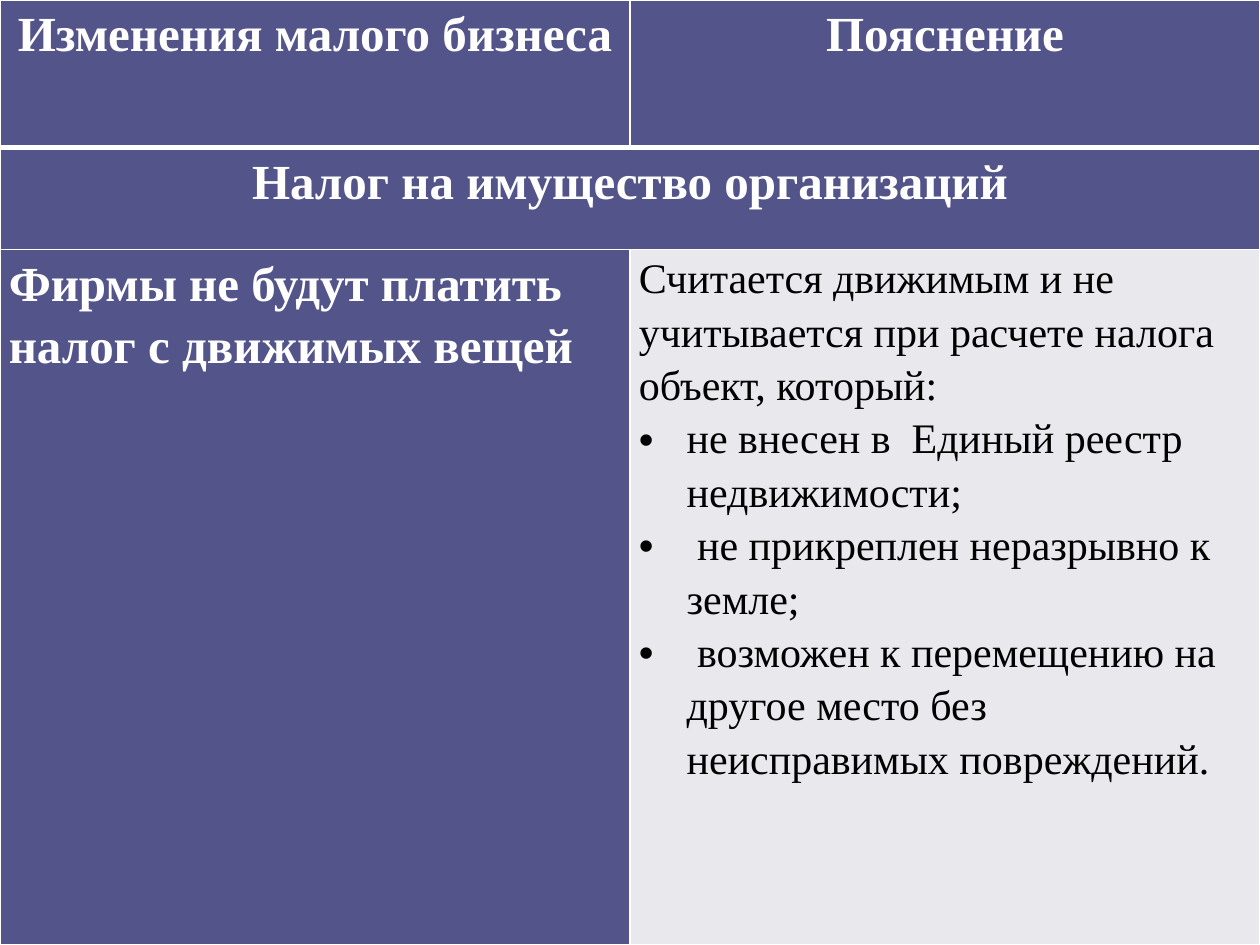
from lxml import etree
from pptx import Presentation
from pptx.dml.color import RGBColor
from pptx.enum import text
from pptx.oxml.ns import qn
from pptx.util import Inches, Pt

INDIGO = RGBColor(0x53, 0x54, 0x8A)
PALE = RGBColor(0xE9, 0xE9, 0xED)
WHITE = RGBColor(0xFF, 0xFF, 0xFF)
BLACK = RGBColor(0, 0, 0)

CENTER = text.PP_ALIGN.CENTER
LEFT = text.PP_ALIGN.LEFT


class TaxSlide:
    font = "Times New Roman"
    line_spacing = 1.15
    side_margin = Inches(0.07)
    bullet_indent = Inches(0.38)

    def __init__(self, deck):
        self.slide = deck.slides.add_slide(deck.slide_layouts[6])

    def table(self, widths, heights):
        frame = self.slide.shapes.add_table(
            len(heights), len(widths), 0, 0,
            Inches(sum(widths)), Inches(sum(heights)))
        grid = frame.table
        for column, width in zip(grid.columns, widths):
            column.width = Inches(width)
        for row, height in zip(grid.rows, heights):
            row.height = Inches(height)
        return grid

    def borders(self, cell, top=1, bottom=1):
        properties = cell._tc.get_or_add_tcPr()
        for side, width in (("L", 1), ("R", 1), ("T", top), ("B", bottom)):
            line = etree.SubElement(properties, qn(f"a:ln{side}"), w=str(Pt(width)))
            fill = etree.SubElement(line, qn("a:solidFill"))
            etree.SubElement(fill, qn("a:srgbClr"), val=str(WHITE))

    def fill(self, cell, color):
        cell.fill.solid()
        cell.fill.fore_color.rgb = color
        cell.margin_left = cell.margin_right = self.side_margin
        cell.margin_top = cell.margin_bottom = 0

    def bullet(self, paragraph):
        properties = paragraph._p.get_or_add_pPr()
        properties.set("marL", str(self.bullet_indent))
        properties.set("indent", str(-self.bullet_indent))
        etree.SubElement(properties, qn("a:buFont"), typeface="Arial")
        etree.SubElement(properties, qn("a:buChar"), char="•")

    def cell_text(self, cell, lead, bullets=(), size=28, color=WHITE, bold=True, align=LEFT):
        body = cell.text_frame
        for index, wording in enumerate((lead, *bullets)):
            paragraph = body.add_paragraph() if index else body.paragraphs[0]
            if index:
                self.bullet(paragraph)
            paragraph.alignment = align
            paragraph.line_spacing = self.line_spacing
            run = paragraph.add_run()
            run.text = wording
            run.font.name = self.font
            run.font.size = Pt(size)
            run.font.bold = bold
            run.font.color.rgb = color


def main():
    deck = Presentation()
    deck.slide_width, deck.slide_height = Inches(10), Inches(7.5)
    page = TaxSlide(deck)

    # Grid: header, section band, detail row
    changes = page.table(widths=(5, 5), heights=(1.17, 0.81, 5.52))
    fills = ((INDIGO, INDIGO), (INDIGO, INDIGO), (INDIGO, PALE))
    rules = ((1, 3), (3, 1), (1, 1))
    for row, (colors, (top, bottom)) in enumerate(zip(fills, rules)):
        for column, color in enumerate(colors):
            cell = changes.cell(row, column)
            page.borders(cell, top, bottom)
            page.fill(cell, color)

    # Header
    page.cell_text(changes.cell(0, 0), "Изменения малого бизнеса", align=CENTER)
    page.cell_text(changes.cell(0, 1), "Пояснение", align=CENTER)

    # Section band
    section = changes.cell(1, 0)
    section.merge(changes.cell(1, 1))
    page.cell_text(section, "Налог на имущество организаций", align=CENTER)

    # Change and its explanation
    page.cell_text(changes.cell(2, 0), "Фирмы не будут платить налог с движимых вещей")
    page.cell_text(
        changes.cell(2, 1),
        "Считается движимым и не учитывается при расчете налога объект, который:",
        bullets=(
            "не внесен в  Единый реестр недвижимости;",
            " не прикреплен неразрывно к земле;",
            " возможен к перемещению на другое место без неисправимых повреждений.",
        ),
        size=24, color=BLACK, bold=False)

    deck.save("out.pptx")


if __name__ == "__main__":
    main()
